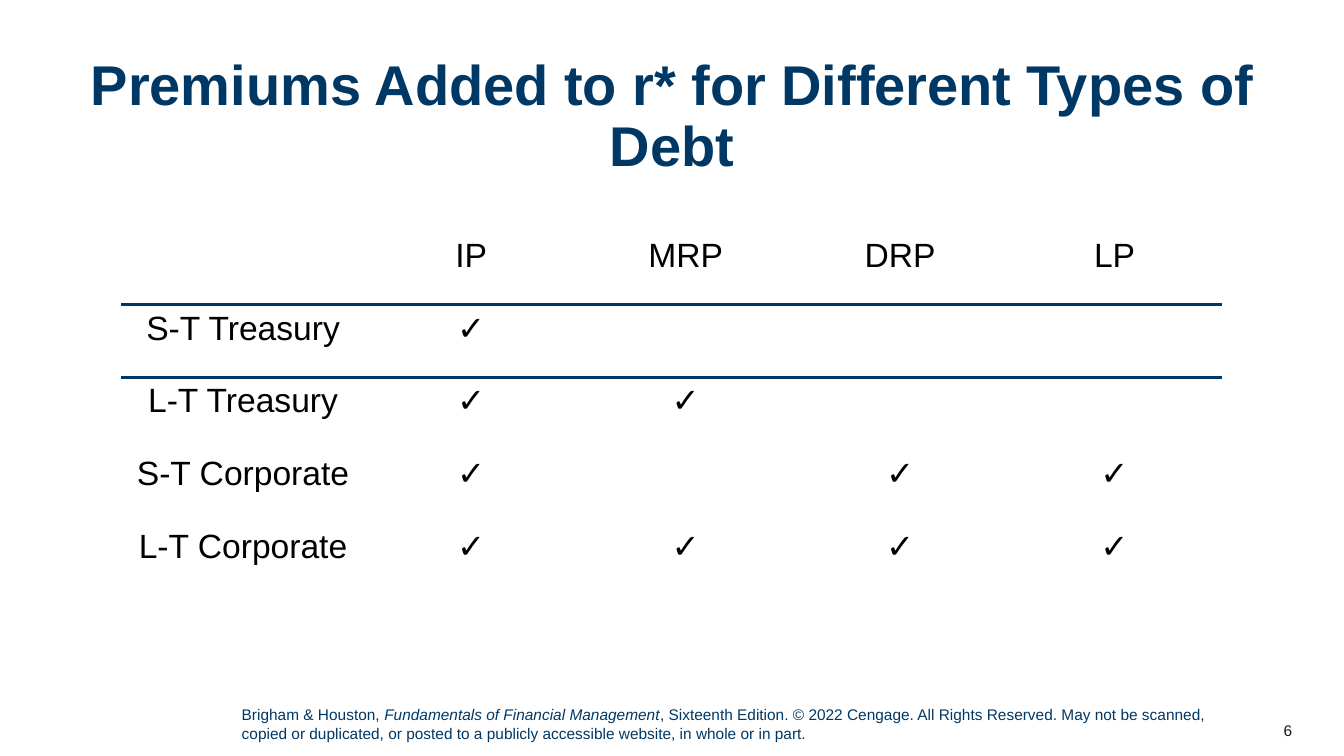
"""Build a slide with a table of the premiums added to r* for each type of debt."""
from lxml.etree import SubElement
from pptx import Presentation
from pptx.dml.color import RGBColor
from pptx.enum.text import MSO_ANCHOR, PP_ALIGN
from pptx.oxml.ns import qn
from pptx.util import Pt

TITLE = "Premiums Added to r* for Different Types of Debt"
PREMIUMS = ["IP", "MRP", "DRP", "LP"]
DEBT_TYPES = {
    "S-T Treasury": ["IP"],
    "L-T Treasury": ["IP", "MRP"],
    "S-T Corporate": ["IP", "DRP", "LP"],
    "L-T Corporate": ["IP", "MRP", "DRP", "LP"],
}
FOOTER = [
    ("Brigham & Houston, ", False),
    ("Fundamentals of Financial Management", True),
    (", Sixteenth Edition. © 2022 Cengage. All Rights Reserved. May not be scanned, "
     "copied or duplicated, or posted to a publicly accessible website, "
     "in whole or in part.", False),
]
PAGE_NUMBER = [("6", False)]

NAVY = RGBColor(0x00, 0x38, 0x65)
BLACK = RGBColor(0x00, 0x00, 0x00)
CHARCOAL = RGBColor(0x18, 0x17, 0x17)
WHITE = RGBColor(0xFF, 0xFF, 0xFF)
FONT_NAME = "Arial"
LABEL_WIDTH, PREMIUM_WIDTH, ROW_HEIGHT = 172.8, 153.2, 52
RULE_WIDTH = 2.25


def format_font(font, size, color, bold=False, italic=False):
    font.name = FONT_NAME
    font.size = Pt(size)
    font.color.rgb = color
    font.bold = bold
    font.italic = italic


def add_title(slide):
    title = slide.shapes.title
    title.left, title.top, title.width, title.height = Pt(37.5), Pt(37.5), Pt(885), Pt(95.8)
    frame = title.text_frame
    frame.text = TITLE
    frame.word_wrap = True
    frame.vertical_anchor = MSO_ANCHOR.TOP
    paragraph = frame.paragraphs[0]
    paragraph.alignment = PP_ALIGN.CENTER
    paragraph.line_spacing = 0.9
    format_font(paragraph.runs[0].font, 40, NAVY, bold=True)


def add_small_text(slide, parts, left, top, width, height, color, alignment, anchor):
    frame = slide.shapes.add_textbox(Pt(left), Pt(top), Pt(width), Pt(height)).text_frame
    frame.word_wrap = True
    frame.vertical_anchor = anchor
    paragraph = frame.paragraphs[0]
    paragraph.alignment = alignment
    for text, italic in parts:
        run = paragraph.add_run()
        run.text = text
        format_font(run.font, 11, color, italic=italic)


def add_rule(cell, edge):
    properties = cell._tc.get_or_add_tcPr()
    line = SubElement(properties, qn(f"a:{edge}"), w=str(Pt(RULE_WIDTH)))
    fill = SubElement(line, qn("a:solidFill"))
    SubElement(fill, qn("a:srgbClr"), val=str(NAVY))
    properties.insert(0, line)


def add_premium_table(slide):
    rows = [["", *PREMIUMS]]
    for debt_type, added in DEBT_TYPES.items():
        rows.append([debt_type, *("✓" if name in added else "" for name in PREMIUMS)])
    widths = [LABEL_WIDTH] + [PREMIUM_WIDTH] * len(PREMIUMS)
    table = slide.shapes.add_table(
        len(rows), len(widths), Pt(87.2), Pt(165.6),
        Pt(sum(widths)), Pt(ROW_HEIGHT * len(rows))).table
    table.first_row = False
    table.horz_banding = False
    for column, width in zip(table.columns, widths):
        column.width = Pt(width)
    for row_index, values in enumerate(rows):
        for column_index, text in enumerate(values):
            cell = table.cell(row_index, column_index)
            cell.fill.solid()
            cell.fill.fore_color.rgb = WHITE
            if row_index < 2:
                add_rule(cell, ("lnB", "lnT")[row_index])
            if text:
                cell.text_frame.text = text
                paragraph = cell.text_frame.paragraphs[0]
                paragraph.alignment = PP_ALIGN.CENTER
                format_font(paragraph.runs[0].font, 24, BLACK)


def main():
    presentation = Presentation()
    presentation.slide_width, presentation.slide_height = Pt(960), Pt(540)
    slide = presentation.slides.add_slide(presentation.slide_layouts[5])
    add_small_text(slide, PAGE_NUMBER, 872.6, 507.6, 57.6, 28.8,
                   CHARCOAL, PP_ALIGN.RIGHT, MSO_ANCHOR.MIDDLE)
    add_small_text(slide, FOOTER, 165.6, 500.4, 705.6, 33.8,
                   NAVY, PP_ALIGN.LEFT, MSO_ANCHOR.TOP)
    add_title(slide)
    add_premium_table(slide)
    presentation.save("out.pptx")


if __name__ == "__main__":
    main()
